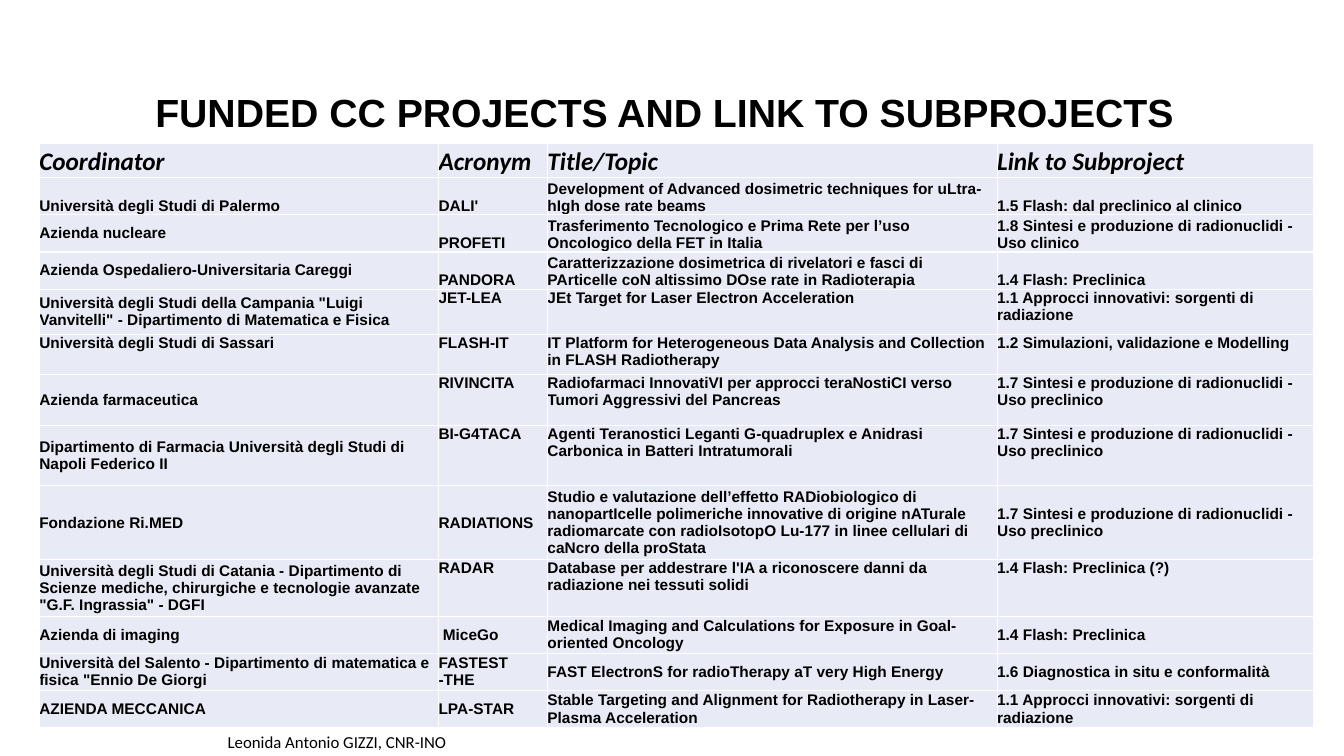
from dataclasses import dataclass

from lxml import etree
from pptx import Presentation
from pptx.dml.color import RGBColor
from pptx.enum import text
from pptx.oxml.ns import qn
from pptx.util import Inches, Pt


@dataclass(frozen=True)
class Theme:
    ink: str = "000000"
    cell: str = "E8EBF5"
    rule: str = "FFFFFF"
    head_font: str = "Calibri"
    body_font: str = "Arial"
    title_size: int = 28
    head_size: int = 18
    cell_size: int = 11
    footer_size: int = 12


ANCHORS = {
    "t": text.MSO_ANCHOR.TOP,
    "m": text.MSO_ANCHOR.MIDDLE,
    "b": text.MSO_ANCHOR.BOTTOM,
}
COLUMN_WIDTHS = [3.96, 1.08, 4.46, 3.14]
HEADINGS = ["Coordinator", "Acronym", "Title/Topic", "Link to Subproject"]

RADIONUCLIDES = "1.7 Sintesi e produzione di radionuclidi - Uso preclinico"
FLASH = "1.4 Flash: Preclinica"
SOURCES = "1.1 Approcci innovativi: sorgenti di radiazione"

# Row height, vertical anchor of each cell, then the four cell texts
PROJECTS = [
    (0.37, "bbbb", "Università degli Studi di Palermo", "DALI'",
     "Development of Advanced dosimetric techniques for uLtra-hIgh dose rate beams",
     "1.5 Flash: dal preclinico al clinico"),
    (0.37, "mbbb", "Azienda nucleare", "PROFETI",
     "Trasferimento Tecnologico e Prima Rete per l’uso Oncologico della FET in Italia",
     "1.8 Sintesi e produzione di radionuclidi - Uso clinico"),
    (0.37, "mbbb", "Azienda Ospedaliero-Universitaria Careggi", "PANDORA",
     "Caratterizzazione dosimetrica di rivelatori e fasci di PArticelle coN "
     "altissimo DOse rate in Radioterapia", FLASH),
    (0.45, "mttt", "Università degli Studi della Campania \"Luigi Vanvitelli\" - "
     "Dipartimento di Matematica e Fisica", "JET-LEA",
     "JEt Target for Laser Electron Acceleration", SOURCES),
    (0.4, "tttt", "Università degli Studi di Sassari", "FLASH-IT",
     "IT Platform for Heterogeneous Data Analysis and Collection in FLASH Radiotherapy",
     "1.2 Simulazioni, validazione e Modelling"),
    (0.5, "mttt", "Azienda farmaceutica", "RIVINCITA",
     "Radiofarmaci InnovatiVI per approcci teraNostiCI verso Tumori Aggressivi "
     "del Pancreas", RADIONUCLIDES),
    (0.6, "mttt", "Dipartimento di Farmacia Università degli Studi di Napoli Federico II",
     "BI-G4TACA",
     "Agenti Teranostici Leganti G-quadruplex e Anidrasi Carbonica in Batteri "
     "Intratumorali", RADIONUCLIDES),
    (0.56, "mmmm", "Fondazione Ri.MED", "RADIATIONS",
     "Studio e valutazione dell’effetto RADiobiologico di nanopartIcelle polimeriche "
     "innovative di origine nATurale radiomarcate con radioIsotopO Lu-177 in linee "
     "cellulari di caNcro della proStata", RADIONUCLIDES),
    (0.56, "mttt", "Università degli Studi di Catania - Dipartimento di Scienze mediche, "
     "chirurgiche e tecnologie avanzate \"G.F. Ingrassia\" - DGFI", "RADAR",
     "Database per addestrare l'IA a riconoscere danni da radiazione nei tessuti solidi",
     FLASH + " (?)"),
    (0.25, "mmmm", "Azienda di imaging", " MiceGo",
     "Medical Imaging and Calculations for Exposure in Goal-oriented Oncology", FLASH),
    (0.37, "mmmm", "Università del Salento - Dipartimento di matematica e fisica "
     "\"Ennio De Giorgi", "FASTEST -THE",
     "FAST ElectronS for radioTherapy aT very High Energy",
     "1.6 Diagnostica in situ e conformalità"),
    (0.37, "mmmm", "AZIENDA MECCANICA", "LPA-STAR",
     "Stable Targeting and Alignment for Radiotherapy in Laser-Plasma Acceleration",
     SOURCES),
]


class SlideBuilder:
    def __init__(self, slide, theme):
        self.slide = slide
        self.theme = theme

    def style(self, p, font, size, bold=False, italic=False):
        p.alignment = text.PP_ALIGN.LEFT
        p.font.name = font
        p.font.size = Pt(size)
        p.font.bold = bold
        p.font.italic = italic
        p.font.color.rgb = RGBColor.from_string(self.theme.ink)

    def title(self, wording, left, top, width, height):
        sp = self.slide.shapes.title
        sp.left, sp.top = Inches(left), Inches(top)
        sp.width, sp.height = Inches(width), Inches(height)
        tf = sp.text_frame
        tf.text = wording
        tf.word_wrap = True
        tf.auto_size = text.MSO_AUTO_SIZE.NONE
        tf.vertical_anchor = text.MSO_ANCHOR.MIDDLE
        p = tf.paragraphs[0]
        p.line_spacing = 0.9
        self.style(p, self.theme.body_font, self.theme.title_size, bold=True)

    def footer(self, wording, left, top, width, height):
        sp = self.slide.shapes.add_textbox(
            Inches(left), Inches(top), Inches(width), Inches(height))
        tf = sp.text_frame
        tf.word_wrap = False
        tf.text = wording
        self.style(tf.paragraphs[0], self.theme.head_font, self.theme.footer_size)

    def borders(self, cell):
        tc_pr = cell._tc.get_or_add_tcPr()
        for side in "LRTB":
            line = etree.SubElement(tc_pr, qn(f"a:ln{side}"), w=str(Pt(1)))
            fill = etree.SubElement(line, qn("a:solidFill"))
            etree.SubElement(fill, qn("a:srgbClr"), val=self.theme.rule)

    def cell(self, cell, wording, anchor, is_heading):
        cell.margin_left = cell.margin_right = cell.margin_top = cell.margin_bottom = 0
        cell.vertical_anchor = ANCHORS[anchor]
        self.borders(cell)
        cell.fill.solid()
        cell.fill.fore_color.rgb = RGBColor.from_string(self.theme.cell)
        cell.text = wording
        p = cell.text_frame.paragraphs[0]
        if is_heading:
            self.style(p, self.theme.head_font, self.theme.head_size, True, True)
        else:
            self.style(p, self.theme.body_font, self.theme.cell_size, True)

    def table(self, rows, widths, left, top):
        """Each row is (height, anchors, *cell texts); the first is the heading."""
        height = sum(row[0] for row in rows)
        table = self.slide.shapes.add_table(
            len(rows), len(widths), Inches(left), Inches(top),
            Inches(sum(widths)), Inches(height)).table
        table.horz_banding = False
        for column, width in zip(table.columns, widths):
            column.width = Inches(width)
        for i, (row_height, anchors, *wordings) in enumerate(rows):
            table.rows[i].height = Inches(row_height)
            for j, (anchor, wording) in enumerate(zip(anchors, wordings)):
                self.cell(table.cell(i, j), wording, anchor, is_heading=i == 0)


def main():
    prs = Presentation()
    prs.slide_width, prs.slide_height = Inches(13.33), Inches(7.5)
    title_only = prs.slide_layouts[5]
    builder = SlideBuilder(prs.slides.add_slide(title_only), Theme())
    builder.footer("Leonida Antonio GIZZI, CNR-INO", 2.16, 7.21, 2.39, 0.3)
    builder.table([(0.34, "bbbb", *HEADINGS), *PROJECTS], COLUMN_WIDTHS, 0.39, 1.42)
    builder.title("FUNDED CC PROJECTS AND LINK TO SUBPROJECTS", 1.44, 0.85, 11.5, 0.57)
    prs.save("out.pptx")


if __name__ == "__main__":
    main()
